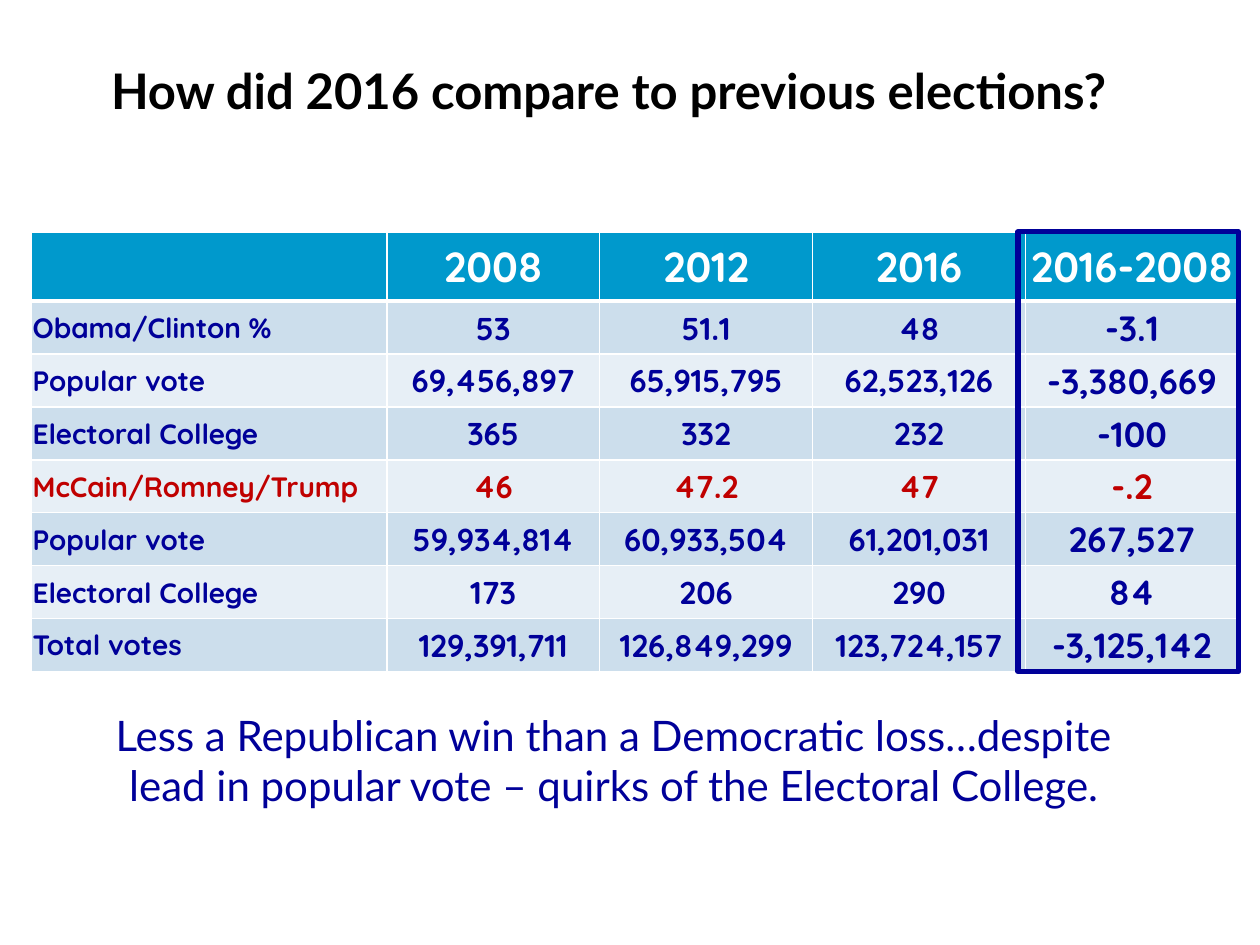
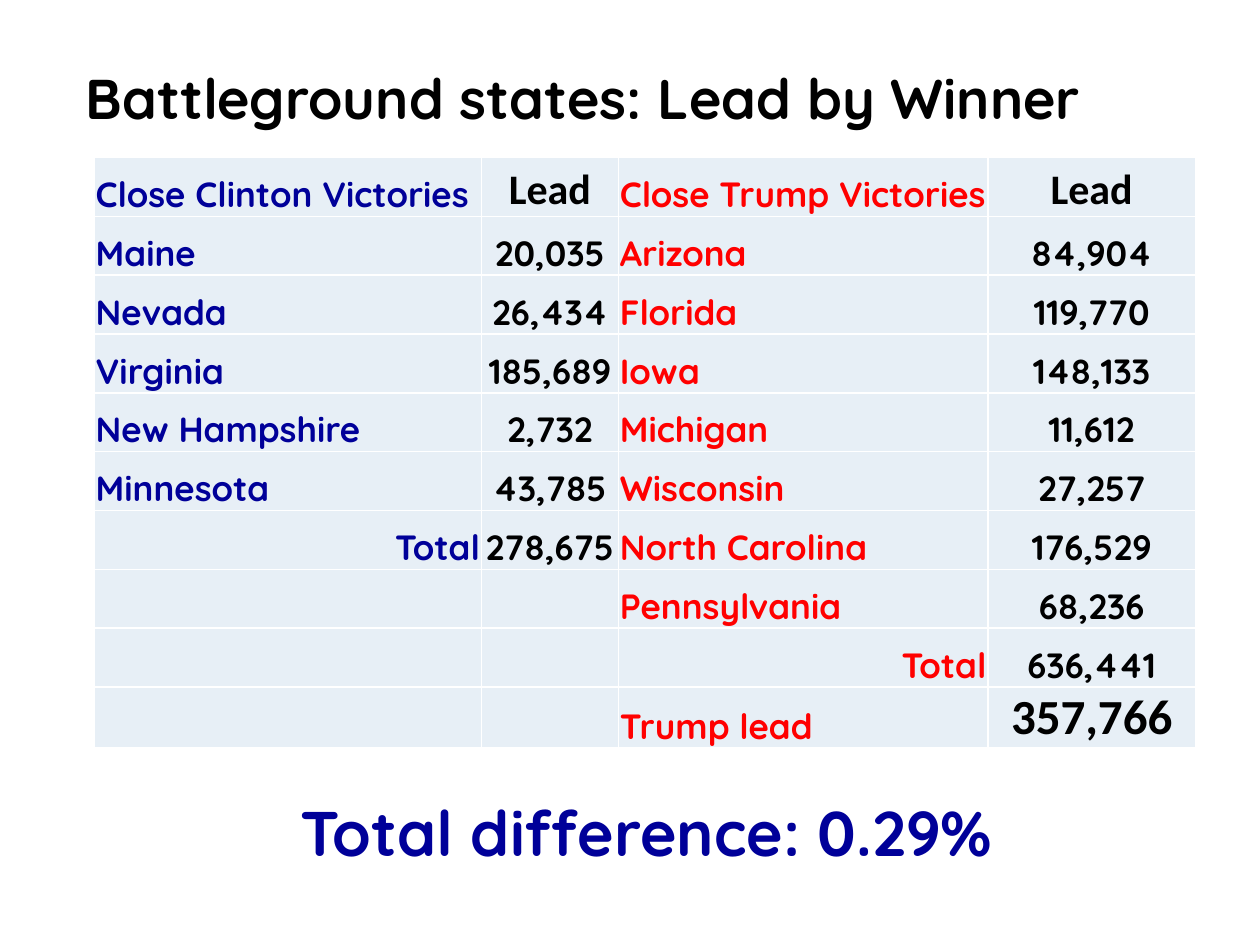
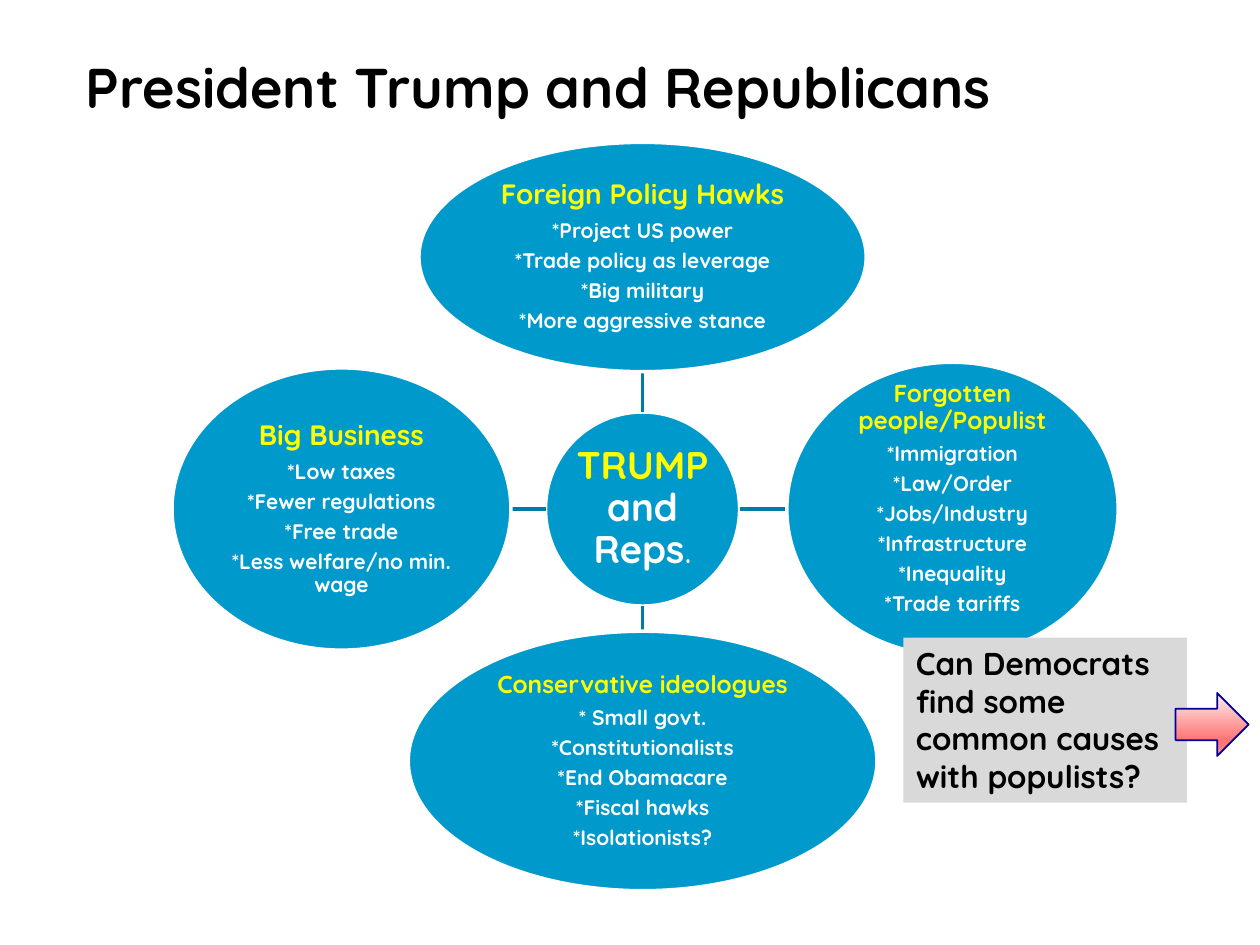
from lxml.etree import SubElement
from pptx import Presentation
from pptx.dml.color import RGBColor
from pptx.enum.shapes import MSO_CONNECTOR, MSO_SHAPE
from pptx.enum.text import MSO_ANCHOR, MSO_AUTO_SIZE, PP_ALIGN
from pptx.oxml.ns import qn
from pptx.util import Inches, Pt

# Shared look
NAVY, BLUE, LINK = "000099", "0099CC", "007BA3"
RED, DARK_RED, YELLOW = "FF0000", "C00000", "FFFF00"
BLACK, WHITE, GREY = "000000", "FFFFFF", "D9D9D9"
BAND_DARK, BAND_LIGHT = "CCDEEC", "E7EFF6"
SANS, ROUND, NARROW = "Lato", "Quicksand", "Calibri"
LEFT, CENTER, RIGHT = PP_ALIGN.LEFT, PP_ALIGN.CENTER, PP_ALIGN.RIGHT

# Slide 1 content
ELECTIONS = [
    ("", "2008", "2012", "2016", "2016-2008"),
    ("Obama/Clinton %", "53", "51.1", "48", "-3.1"),
    ("Popular vote", "69,456,897", "65,915,795", "62,523,126", "-3,380,669"),
    ("Electoral College", "365", "332", "232", "-100"),
    ("McCain/Romney/Trump", "46", "47.2", "47", "-.2"),
    ("Popular vote", "59,934,814", "60,933,504", "61,201,031", "267,527"),
    ("Electoral College", "173", "206", "290", "84"),
    ("Total votes", "129,391,711", "126,849,299", "123,724,157", "-3,125,142"),
]
ELECTION_COLUMNS = [2.82, 1.69, 1.69, 1.69, 1.69]
ELECTION_SIZES = [16, 18, 18, 18, 20]
REPUBLICAN_ROW = 4

# Slide 2 content
STATES = [
    ("Close Clinton Victories", "Lead", "Close Trump Victories", "Lead"),
    ("Maine", "20,035", "Arizona", "84,904"),
    ("Nevada", "26,434", "Florida", "119,770"),
    ("Virginia", "185,689", "Iowa", "148,133"),
    ("New Hampshire", "2,732", "Michigan", "11,612"),
    ("Minnesota", "43,785", "Wisconsin", "27,257"),
    ("Total", "278,675", "North Carolina", "176,529"),
    ("", "", "Pennsylvania", "68,236"),
    ("", "", "Total", "636,441"),
    ("", "", "Trump lead", "357,766"),
]
STATE_COLUMNS = [3.07, 1.09, 2.93, 1.65]
STATE_COLORS = [NAVY, BLACK, RED, BLACK]
SPECIAL_FONTS = {"Lead": (24, NARROW), "357,766": (28, NARROW)}

# Slide 3 content: direction from hub, distance, size, heading size, extra bottom inset, lines
HUB_CENTER, HUB_SIZE = (5.1, 4.04), 1.54
FACTIONS = [
    ((0, -1), 2, (3.55, 1.82), 16, 0,
     ["Foreign Policy Hawks", "*Project US power", "*Trade policy as leverage",
      "*Big military", "*More aggressive stance"]),
    ((1, 0), 2.46, (2.63, 2.33), 14, 0.16,
     ["Forgotten people/Populist", "*Immigration", "*Law/Order", "*Jobs/Industry",
      "*Infrastructure", "*Inequality", "*Trade tariffs"]),
    ((0, 1), 2, (3.72, 2.06), 14, 0,
     ["Conservative ideologues", "* Small govt.", "*Constitutionalists",
      "*End Obamacare", "*Fiscal hawks", "*Isolationists?"]),
    ((-1, 0), 2.39, (2.69, 2.24), 16, 0,
     ["Big Business", "*Low taxes", "*Fewer regulations", "*Free trade",
      "*Less welfare/no min. wage"]),
]
ARROW_STOPS = [(0, "FFF0F0"), (74, "FF7575"), (83, "FF7575"), (100, "FFA3A3")]


def rgb(color):
    return RGBColor.from_string(color)


def box(*lengths):
    return [Inches(length) for length in lengths]


def add_run(paragraph, text, size, color, font=ROUND, bold=True):
    run = paragraph.add_run()
    run.text = text
    run.font.size, run.font.name, run.font.bold = Pt(size), font, bold
    run.font.color.rgb = rgb(color)


def set_insets(target, left, top, right, bottom):
    target.margin_left, target.margin_top = Inches(left), Inches(top)
    target.margin_right, target.margin_bottom = Inches(right), Inches(bottom)


def add_titled_slide(presentation, title, place, size, font=ROUND, alignment=LEFT):
    slide = presentation.slides.add_slide(presentation.slide_layouts[5])
    shape = slide.shapes.title
    shape.left, shape.top, shape.width, shape.height = box(*place)
    frame = shape.text_frame
    frame.auto_size = MSO_AUTO_SIZE.NONE
    frame.vertical_anchor = MSO_ANCHOR.BOTTOM
    frame.paragraphs[0].alignment = alignment
    add_run(frame.paragraphs[0], title, size, BLACK, font)
    return slide


def add_caption(slide, place, text, size, font, bold):
    frame = slide.shapes.add_textbox(*box(*place)).text_frame
    frame.word_wrap = True
    frame.paragraphs[0].alignment = CENTER
    add_run(frame.paragraphs[0], text, size, NAVY, font, bold)


def add_shape(slide, kind, place, fill=None, line=None, line_width=1):
    shape = slide.shapes.add_shape(kind, *box(*place))
    shape.shadow.inherit = False
    if fill:
        shape.fill.solid()
        shape.fill.fore_color.rgb = rgb(fill)
    else:
        shape.fill.background()
    if line:
        shape.line.color.rgb = rgb(line)
        shape.line.width = Pt(line_width)
    else:
        shape.line.fill.background()
    return shape


def set_borders(cell, bottom_width):
    properties = cell._tc.get_or_add_tcPr()
    widths = {"a:lnL": 1, "a:lnR": 1, "a:lnT": 1, "a:lnB": bottom_width}
    for position, (tag, width) in enumerate(widths.items()):
        line = SubElement(properties, qn(tag), w=str(Pt(width)))
        SubElement(SubElement(line, qn("a:solidFill")), qn("a:srgbClr"), val=WHITE)
        properties.insert(position, line)


def add_grid(slide, left, top, rows, column_widths, row_heights, anchor, style):
    """style(row, column, text) gives fill, size, color, font, alignment, bottom border."""
    table = slide.shapes.add_table(
        len(rows), len(column_widths),
        *box(left, top, sum(column_widths), sum(row_heights))).table
    table.first_row = table.horz_banding = False
    for column, width in zip(table.columns, column_widths):
        column.width = Inches(width)
    for row_index, (values, height) in enumerate(zip(rows, row_heights)):
        table.rows[row_index].height = Inches(height)
        for column_index, text in enumerate(values):
            cell = table.cell(row_index, column_index)
            fill, size, color, font, alignment, bottom = style(row_index, column_index, text)
            cell.fill.solid()
            cell.fill.fore_color.rgb = rgb(fill)
            set_borders(cell, bottom)
            set_insets(cell, 0.01, 0.01, 0.01, 0)
            cell.vertical_anchor = anchor
            paragraph = cell.text_frame.paragraphs[0]
            paragraph.alignment = alignment
            if text:
                add_run(paragraph, text, size, color, font)


def election_style(row, column, text):
    if row == 0:
        return BLUE, 24, WHITE, ROUND, CENTER, 3
    fill = BAND_DARK if row % 2 else BAND_LIGHT
    color = DARK_RED if row == REPUBLICAN_ROW else NAVY
    return fill, ELECTION_SIZES[column], color, ROUND, CENTER if column else LEFT, 1


def state_style(row, column, text):
    size, font = SPECIAL_FONTS.get(text, (20, ROUND))
    alignment = CENTER if column % 2 else RIGHT if text == "Total" else LEFT
    return BAND_LIGHT, size, STATE_COLORS[column], font, alignment, 1


def add_link(slide, start, end):
    connector = slide.shapes.add_connector(MSO_CONNECTOR.STRAIGHT, *box(*start, *end))
    connector.line.color.rgb = rgb(LINK)
    connector.line.width = Pt(2)
    SubElement(connector._element.spPr, qn("a:effectLst"))


def add_ellipse(slide, center, size, inset):
    corner = [middle - length / 2 for middle, length in zip(center, size)]
    shape = add_shape(slide, MSO_SHAPE.OVAL, (*corner, *size), BLUE, WHITE, 2)
    frame = shape.text_frame
    frame.word_wrap = True
    frame.vertical_anchor = MSO_ANCHOR.MIDDLE
    set_insets(frame, inset, inset, inset, inset)
    return frame


def add_ellipse_line(frame, index, size):
    paragraph = frame.add_paragraph() if index else frame.paragraphs[0]
    paragraph.alignment = CENTER
    paragraph.line_spacing = 0.9
    paragraph.space_after = Pt(round(0.35 * size, 1))
    return paragraph


def toward(point, direction, distance):
    return [start + step * distance for start, step in zip(point, direction)]


def build_comparison(presentation):
    slide = add_titled_slide(presentation, "How did 2016 compare to previous elections?",
                             (0.33, 0.42, 9, 0.58), 28, SANS, CENTER)
    left, top, heights = 0.25, 1.84, [0.55] + [0.42] * 7
    add_grid(slide, left, top, ELECTIONS, ELECTION_COLUMNS, heights,
             MSO_ANCHOR.MIDDLE, election_style)
    # Frame around the difference column
    right, width = left + sum(ELECTION_COLUMNS), 1.75
    add_shape(slide, MSO_SHAPE.RECTANGLE, (right - width, top, width, sum(heights)),
              line=NAVY, line_width=3)
    add_caption(slide, (0.58, 5.58, 8.58, 0.91),
                "Less a Republican win than a Democratic loss…despite lead in popular vote"
                " – quirks of the Electoral College.", 24, SANS, False)


def build_battlegrounds(presentation):
    slide = add_titled_slide(presentation, "Battleground states: Lead by Winner",
                             (0.58, 0.42, 8.75, 0.67), 32)
    add_grid(slide, 0.75, 1.25, STATES, STATE_COLUMNS, [0.467] * len(STATES),
             MSO_ANCHOR.BOTTOM, state_style)
    add_caption(slide, (0.92, 6.25, 8.42, 0.71), "Total difference: 0.29%", 36, ROUND, True)


def build_factions(presentation):
    slide = add_titled_slide(presentation, "President Trump and Republicans",
                             (0.58, 0.42, 8.75, 0.58), 32)
    # Hub
    hub = add_ellipse(slide, HUB_CENTER, (HUB_SIZE, HUB_SIZE), 0.02)
    paragraph = add_ellipse_line(hub, 0, 22)
    add_run(paragraph, "TRUMP", 22, YELLOW)
    add_run(paragraph, " and Reps", 22, WHITE)
    add_run(paragraph, ".", 22, WHITE, bold=False)
    # Factions around the hub
    for direction, distance, size, heading_size, extra, lines in FACTIONS:
        center = toward(HUB_CENTER, direction, distance)
        radius = size[0 if direction[0] else 1] / 2
        add_link(slide, toward(HUB_CENTER, direction, HUB_SIZE / 2),
                 toward(center, direction, -radius))
        frame = add_ellipse(slide, center, size, 0.01)
        frame.margin_bottom = Inches(0.01 + extra)
        for index, text in enumerate(lines):
            text_size, color = (12, WHITE) if index else (heading_size, YELLOW)
            add_run(add_ellipse_line(frame, index, text_size), text, text_size, color)
    # Question and arrow
    question = add_shape(slide, MSO_SHAPE.RECTANGLE, (7.17, 5.06, 2.25, 1.31), GREY).text_frame
    question.word_wrap = True
    question.vertical_anchor = MSO_ANCHOR.TOP
    question.paragraphs[0].alignment = LEFT
    add_run(question.paragraphs[0], "Can Democrats find some common causes with populists?",
            18, BLACK)
    arrow = add_shape(slide, MSO_SHAPE.RIGHT_ARROW, (9.33, 5.5, 0.58, 0.5), line=NAVY)
    arrow.fill.gradient()
    arrow.fill.gradient_angle = 270
    stops = arrow._element.spPr.find(qn("a:gradFill")).find(qn("a:gsLst"))
    for stop in list(stops):
        stops.remove(stop)
    for position, color in ARROW_STOPS:
        stop = SubElement(stops, qn("a:gs"), pos=str(position * 1000))
        SubElement(stop, qn("a:srgbClr"), val=color)


def main():
    presentation = Presentation()
    presentation.slide_width, presentation.slide_height = Inches(10), Inches(7.5)
    build_comparison(presentation)
    build_battlegrounds(presentation)
    build_factions(presentation)
    presentation.save("out.pptx")


if __name__ == "__main__":
    main()
